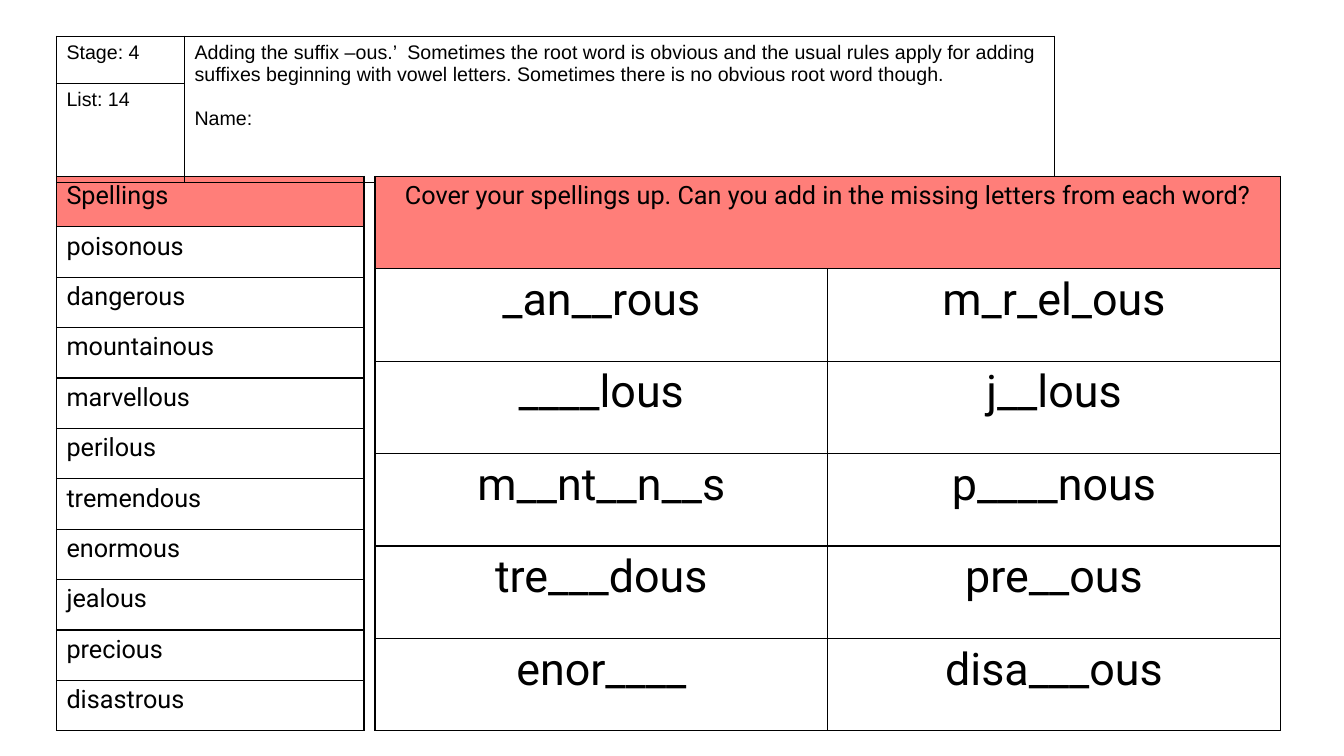
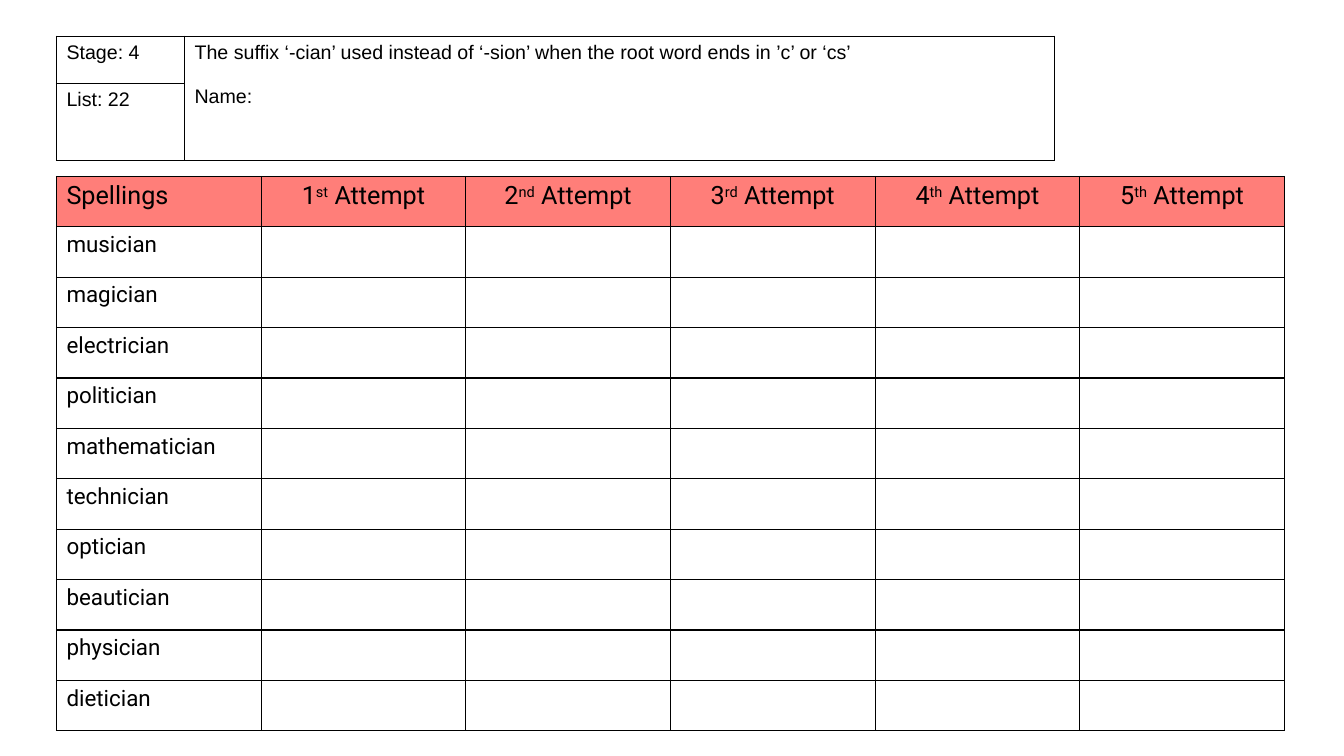
from dataclasses import dataclass

import pptx
import pptx.dml.color
import pptx.enum.text
import pptx.oxml
import pptx.oxml.ns
import pptx.slide
import pptx.table
import pptx.text.text
import pptx.util

Inches = pptx.util.Inches
Pt = pptx.util.Pt

BLACK = "000000"
CORAL = "FF7E79"
LEFT = 0.56
HEADING_TOP = 0.36
BODY_TOP = 1.75
BODY_HEIGHT = 5.5
HEADING_SIZE = 18
CENTRE = pptx.enum.text.PP_ALIGN.CENTER


@dataclass
class Grid:
    left: float
    top: float
    columns: list[float]
    rows: list[float]


@dataclass
class Heading:
    stage: int
    word_list: int
    rule: str
    second_row: float


ous_heading = Heading(
    4, 14,
    "Adding the suffix –ous.’  Sometimes the root word is obvious and the usual rules apply "
    "for adding suffixes beginning with vowel letters. Sometimes there is no obvious root "
    "word though.",
    0.98,
)
cian_heading = Heading(
    4, 22,
    "The suffix ‘-cian’ used instead of ‘-sion’ when the root word ends in ’c’ or ‘cs’",
    0.76,
)
OUS_WORDS = ["poisonous", "dangerous", "mountainous", "marvellous", "perilous",
             "tremendous", "enormous", "jealous", "precious", "disastrous"]
CIAN_WORDS = ["musician", "magician", "electrician", "politician", "mathematician",
              "technician", "optician", "beautician", "physician", "dietician"]
PUZZLES = [("_an__rous", "m_r_el_ous"), ("____lous", "j__lous"),
           ("m__nt__n__s", "p____nous"), ("tre___dous", "pre__ous"),
           ("enor____", "disa___ous")]
ORDINALS = ["st", "nd", "rd", "th", "th"]


def color(value: str) -> pptx.dml.color.RGBColor:
    return pptx.dml.color.RGBColor.from_string(value)


def add_borders(cell: pptx.table._Cell) -> None:
    properties = cell._tc.get_or_add_tcPr()
    for side in ("lnL", "lnR", "lnT", "lnB"):
        properties.append(pptx.oxml.parse_xml(
            f'<a:{side} {pptx.oxml.ns.nsdecls("a")} w="{Pt(1)}">'
            f'<a:solidFill><a:srgbClr val="{BLACK}"/></a:solidFill></a:{side}>'
        ))


def add_grid(slide: pptx.slide.Slide, grid: Grid) -> pptx.table.Table:
    """Add a plain table with black borders and no fill."""
    table = slide.shapes.add_table(
        len(grid.rows), len(grid.columns), Inches(grid.left), Inches(grid.top),
        Inches(sum(grid.columns)), Inches(sum(grid.rows)),
    ).table
    table.first_row = False
    table.horz_banding = False
    for column, width in zip(table.columns, grid.columns):
        column.width = Inches(width)
    for row, height in zip(table.rows, grid.rows):
        row.height = Inches(height)
    for cell in table.iter_cells():
        add_borders(cell)
        cell.fill.background()
    return table


def style_runs(paragraph: pptx.text.text._Paragraph, size: float, font: str) -> None:
    for run in paragraph.runs:
        run.font.size = Pt(size)
        run.font.name = font
        run.font.color.rgb = color(BLACK)


def write(cell: pptx.table._Cell, text: str, size: float, font: str = "Roboto",
          centred: bool = False) -> None:
    cell.text_frame.text = text
    for paragraph in cell.text_frame.paragraphs:
        if centred:
            paragraph.alignment = CENTRE
        style_runs(paragraph, size, font)


def write_attempt(cell: pptx.table._Cell, number: int, ordinal: str) -> None:
    paragraph = cell.text_frame.paragraphs[0]
    paragraph.alignment = CENTRE
    for text in (str(number), ordinal, " Attempt"):
        paragraph.add_run().text = text
    style_runs(paragraph, HEADING_SIZE, "Roboto")
    paragraph.runs[1]._r.get_or_add_rPr().set("baseline", "30000")


def fill_first_row(table: pptx.table.Table) -> None:
    for column in range(len(table.columns)):
        cell = table.cell(0, column)
        cell.fill.solid()
        cell.fill.fore_color.rgb = color(CORAL)


def add_heading(slide: pptx.slide.Slide, heading: Heading) -> None:
    table = add_grid(slide, Grid(LEFT, HEADING_TOP, [1.27, 8.63], [0.47, heading.second_row]))
    rule_cell = table.cell(0, 1)
    rule_cell.merge(table.cell(1, 1))
    write(table.cell(0, 0), f"Stage: {heading.stage}", 14, "Arial")
    write(table.cell(1, 0), f"List: {heading.word_list}", 14, "Arial")
    write(rule_cell, f"{heading.rule}\nName:", 14, "Arial")
    rule_cell.text_frame.paragraphs[1].space_before = Pt(16)


def add_spellings(slide: pptx.slide.Slide, words: list[str], columns: list[float],
                  size: float) -> pptx.table.Table:
    """Add a table whose first column lists the words under a coloured heading."""
    row_count = len(words) + 1
    rows = [BODY_HEIGHT / row_count] * row_count
    table = add_grid(slide, Grid(LEFT, BODY_TOP, columns, rows))
    fill_first_row(table)
    write(table.cell(0, 0), "Spellings", HEADING_SIZE)
    for row, word in enumerate(words, start=1):
        write(table.cell(row, 0), word, size)
    return table


def add_puzzles(slide: pptx.slide.Slide) -> None:
    row_count = len(PUZZLES) + 1
    rows = [BODY_HEIGHT / row_count] * row_count
    table = add_grid(slide, Grid(3.72, BODY_TOP, [4.49, 4.49], rows))
    fill_first_row(table)
    table.cell(0, 0).merge(table.cell(0, 1))
    write(table.cell(0, 0),
          "Cover your spellings up. Can you add in the missing letters from each word?",
          HEADING_SIZE, centred=True)
    for row, puzzles in enumerate(PUZZLES, start=1):
        for column, puzzle in enumerate(puzzles):
            write(table.cell(row, column), puzzle, 32, centred=True)


def main() -> None:
    presentation = pptx.Presentation()
    presentation.slide_width = Inches(13.33)
    presentation.slide_height = Inches(7.5)
    blank = presentation.slide_layouts[6]

    puzzle_slide = presentation.slides.add_slide(blank)
    add_spellings(puzzle_slide, OUS_WORDS, [3.05], 18)
    add_heading(puzzle_slide, ous_heading)
    add_puzzles(puzzle_slide)

    attempt_slide = presentation.slides.add_slide(blank)
    attempts = add_spellings(attempt_slide, CIAN_WORDS, [2.03] * 6, 16)
    for number, ordinal in enumerate(ORDINALS, start=1):
        write_attempt(attempts.cell(0, number), number, ordinal)
    add_heading(attempt_slide, cian_heading)

    presentation.save("out.pptx")


if __name__ == "__main__":
    main()
